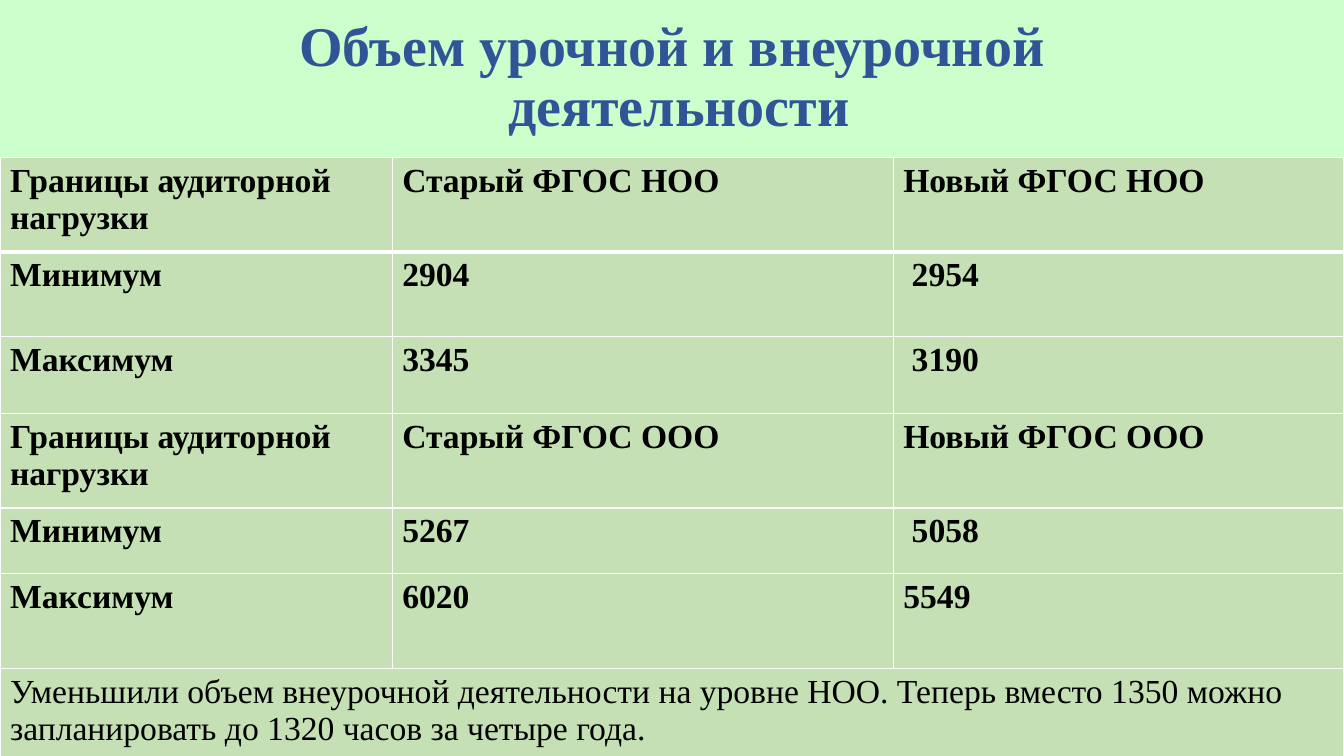
"""Build a slide comparing old and new teaching-load limits in a table."""
from lxml.etree import SubElement
from pptx import Presentation
from pptx.dml.color import RGBColor
from pptx.enum.shapes import MSO_SHAPE
from pptx.enum.text import MSO_ANCHOR, PP_ALIGN
from pptx.oxml import parse_xml
from pptx.oxml.ns import nsdecls, qn
from pptx.util import Inches, Pt

COLORS = {"banner": "CCFFCC", "title": "2F5597", "cell": "C5E0B4",
          "text": "000000", "border": "FFFFFF"}
FONT = "Times New Roman"
TITLE_LINES = ["Объем урочной и внеурочной", " деятельности"]
ROWS = [
    ["Границы аудиторной нагрузки", "Старый ФГОС НОО", "Новый ФГОС НОО"],
    ["Минимум", "2904", " 2954"],
    ["Максимум", "3345", " 3190"],
    ["Границы аудиторной нагрузки", "Старый ФГОС ООО", "Новый ФГОС ООО"],
    ["Минимум", "5267", " 5058"],
    ["Максимум", "6020", "5549"],
    ["Уменьшили объем внеурочной деятельности на уровне НОО. Теперь вместо 1350 "
     "можно запланировать до 1320 часов за четыре года."],
]
COLUMN_WIDTHS = [3.89, 4.97, 4.47]
ROW_HEIGHTS = [0.94, 0.84, 0.76, 0.94, 0.65, 0.94, 0.94]


def add_text(paragraph, text, size, color, bold):
    run = paragraph.add_run()
    run.text = text
    run.font.name = FONT
    run.font.size = Pt(size)
    run.font.bold = bold
    run.font.color.rgb = RGBColor.from_string(COLORS[color])


def set_borders(cell, widths):
    properties = cell._tc.get_or_add_tcPr()
    for position, (side, width) in enumerate(widths.items()):
        line = parse_xml(f'<a:ln{side} {nsdecls("a")} w="{Pt(width)}"/>')
        fill = SubElement(line, qn("a:solidFill"))
        SubElement(fill, qn("a:srgbClr"), val=COLORS["border"])
        properties.insert(position, line)


presentation = Presentation()
presentation.slide_width = Inches(13.33)
presentation.slide_height = Inches(7.5)
slide = presentation.slides.add_slide(presentation.slide_layouts[6])
slide_width = presentation.slide_width
banner_height = Inches(1.56)

banner = slide.shapes.add_shape(MSO_SHAPE.RECTANGLE, 0, 0, slide_width, banner_height)
banner.shadow.inherit = False
banner.fill.solid()
banner.fill.fore_color.rgb = RGBColor.from_string(COLORS["banner"])
banner.line.fill.background()
banner.text_frame.word_wrap = True
banner.text_frame.vertical_anchor = MSO_ANCHOR.MIDDLE
paragraph = banner.text_frame.paragraphs[0]
paragraph.alignment = PP_ALIGN.CENTER
paragraph.line_spacing = 0.9
for index, line_text in enumerate(TITLE_LINES):
    if index:
        paragraph.add_line_break()
    add_text(paragraph, line_text, 40, "title", True)

table = slide.shapes.add_table(len(ROWS), len(COLUMN_WIDTHS), 0, banner_height,
                               slide_width, Inches(sum(ROW_HEIGHTS))).table
for column, width in zip(table.columns, COLUMN_WIDTHS):
    column.width = Inches(width)
for row, height in zip(table.rows, ROW_HEIGHTS):
    row.height = Inches(height)

last_row = len(ROWS) - 1
table.cell(last_row, 0).merge(table.cell(last_row, len(COLUMN_WIDTHS) - 1))
for row_index, row in enumerate(table.rows):
    for cell in row.cells:
        cell.fill.solid()
        cell.fill.fore_color.rgb = RGBColor.from_string(COLORS["cell"])
        set_borders(cell, {"L": 1, "R": 1, "T": 3 if row_index == 1 else 1,
                           "B": 3 if row_index == 0 else 1})
    for cell, text in zip(row.cells, ROWS[row_index]):
        add_text(cell.text_frame.paragraphs[0], text, 24, "text", row_index < last_row)

presentation.save("out.pptx")
